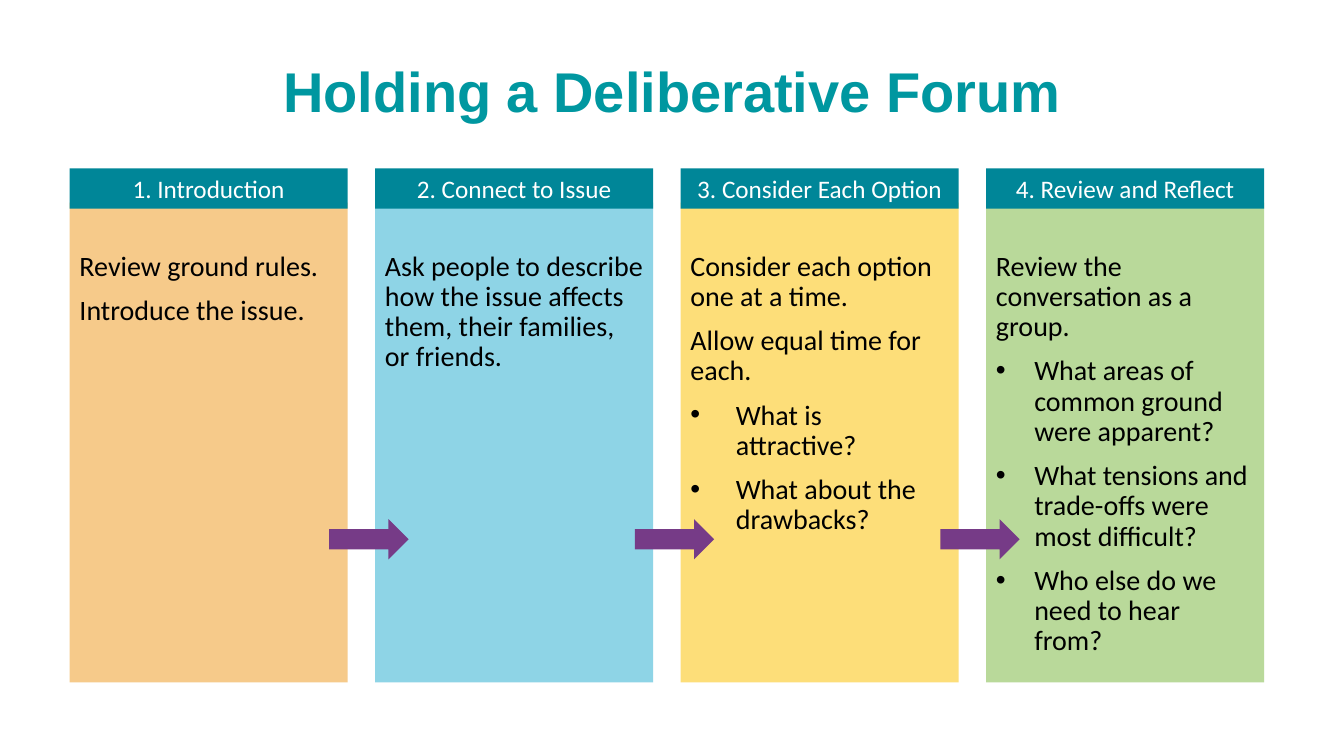
from dataclasses import dataclass

from lxml.etree import SubElement
from pptx import Presentation
from pptx.dml.color import RGBColor
from pptx.enum.shapes import MSO_SHAPE
from pptx.enum.text import MSO_ANCHOR, MSO_AUTO_SIZE, PP_ALIGN
from pptx.oxml.ns import qn
from pptx.util import Inches, Pt


@dataclass(frozen=True)
class Theme:
    """Colours, fonts and type sizes of the deck."""
    title_color: str = "0097A0"
    header_fill: str = "008698"
    header_color: str = "FFFFFF"
    body_color: str = "000000"
    arrow_fill: str = "763B87"
    title_font: str = "Arial"
    text_font: str = "Calibri"
    title_size: int = 40
    header_size: int = 18
    body_size: int = 20


@dataclass(frozen=True)
class Stage:
    """One stage of the forum."""
    heading: str
    fill: str
    opacity: int
    statements: tuple
    questions: tuple = ()
    indent: float = 0


STAGES = (
    Stage("1. Introduction", "F0A83C", 60,
          ("Review ground rules.", "Introduce the issue.")),
    Stage("2. Connect to Issue", "5FC2DC", 70,
          ("Ask people to describe how the issue affects them, their families, or friends.",)),
    Stage("3. Consider Each Option", "FDDB6B", 90,
          ("Consider each option one at a time.", "Allow equal time for each."),
          ("What is attractive?", "What about the drawbacks?"), 0.45),
    Stage("4. Review and Reflect", "95C665", 65,
          ("Review the conversation as a group.",),
          ("What areas of common ground were apparent?",
           "What tensions and trade-offs were most difficult?",
           "Who else do we need to hear from?"), 0.38),
)


def apply_format(target, values):
    """Set each attribute named in a dict of format values."""
    for name, value in values.items():
        setattr(target, name, value)


class ForumSlide:
    """Draws the elements of a slide in one style on one grid."""
    grid_left, grid_top = 0.69, 1.67
    column_pitch, row_pitch = 3.03, 0.4

    def __init__(self, presentation, theme):
        """Add a title-only slide."""
        self.theme = theme
        self.width, self.height = presentation.slide_width, presentation.slide_height
        self.slide = presentation.slides.add_slide(presentation.slide_layouts[5])

    def add_text(self, paragraph, text, font, color, layout):
        """Fill a paragraph with formatted text."""
        apply_format(paragraph, layout)
        run = paragraph.add_run()
        run.text = text
        apply_format(run.font, font)
        run.font.color.rgb = RGBColor.from_string(color)

    def title(self, text, left, top, width, height):
        """Place the title by shares of the slide's size."""
        title = self.slide.shapes.title
        apply_format(title, {
            "left": int(left * self.width), "top": int(top * self.height),
            "width": int(width * self.width), "height": int(height * self.height)})
        apply_format(title.text_frame, {
            "word_wrap": True, "auto_size": MSO_AUTO_SIZE.NONE,
            "vertical_anchor": MSO_ANCHOR.MIDDLE})
        self.add_text(title.text_frame.paragraphs[0], text,
                      {"name": self.theme.title_font, "size": Pt(self.theme.title_size),
                       "bold": True},
                      self.theme.title_color,
                      {"alignment": PP_ALIGN.CENTER, "line_spacing": 0.9})

    def block(self, kind, fill, column, row, columns, rows, opacity=100):
        """Add a filled shape on the grid."""
        shape = self.slide.shapes.add_shape(
            kind,
            Inches(self.grid_left + column * self.column_pitch),
            Inches(self.grid_top + row * self.row_pitch),
            Inches(columns * self.column_pitch), Inches(rows * self.row_pitch))
        shape.shadow.inherit = False
        shape.fill.solid()
        shape.fill.fore_color.rgb = RGBColor.from_string(fill)
        shape.line.fill.background()
        if opacity < 100:
            color = shape.element.spPr.find(qn("a:solidFill")).find(qn("a:srgbClr"))
            SubElement(color, qn("a:alpha"), val=str(opacity * 1000))
        return shape

    def header(self, text, column):
        """Add the heading bar of a column."""
        shape = self.block(MSO_SHAPE.RECTANGLE, self.theme.header_fill, column, 0, 0.91, 1)
        apply_format(shape.text_frame, {
            "word_wrap": True, "auto_size": MSO_AUTO_SIZE.SHAPE_TO_FIT_TEXT,
            "vertical_anchor": MSO_ANCHOR.TOP})
        self.add_text(shape.text_frame.paragraphs[0], text,
                      {"name": self.theme.text_font, "size": Pt(self.theme.header_size)},
                      self.theme.header_color, {"alignment": PP_ALIGN.CENTER})

    def bullet(self, paragraph, indent):
        """Give a paragraph a bullet with a hanging indent."""
        properties = paragraph._p.get_or_add_pPr()
        properties.set("marL", str(Inches(indent)))
        properties.set("indent", str(-Inches(indent)))
        SubElement(properties, qn("a:buFont"), typeface="Arial")
        SubElement(properties, qn("a:buChar"), char="•")

    def body(self, stage, column):
        """Add the panel of a column with its statements and questions."""
        shape = self.block(MSO_SHAPE.RECTANGLE, stage.fill, column, 0.85, 0.91, 11.9, stage.opacity)
        frame = shape.text_frame
        apply_format(frame, {"word_wrap": True, "vertical_anchor": MSO_ANCHOR.TOP,
                             "margin_top": Inches(0.49)})
        for index, text in enumerate(stage.statements + stage.questions):
            paragraph = frame.add_paragraph() if index else frame.paragraphs[0]
            self.add_text(paragraph, text,
                          {"name": self.theme.text_font, "size": Pt(self.theme.body_size)},
                          self.theme.body_color,
                          {"alignment": PP_ALIGN.LEFT, "line_spacing": 0.9,
                           "space_before": Pt(10 if index else 0)})
            if index >= len(stage.statements):
                self.bullet(paragraph, stage.indent)

    def arrow(self, column):
        """Add the arrow from a column to the next."""
        self.block(MSO_SHAPE.RIGHT_ARROW, self.theme.arrow_fill, column + 0.85, 8.7, 0.26, 1)


def main():
    """Build and save the presentation."""
    presentation = Presentation()
    apply_format(presentation, {"slide_width": Inches(13.33), "slide_height": Inches(7.5)})
    forum = ForumSlide(presentation, Theme())
    forum.title("Holding a Deliberative Forum", 0.07, 0.03, 0.86, 0.19)
    for column, stage in enumerate(STAGES):
        forum.body(stage, column)
        forum.header(stage.heading, column)
    for column in range(len(STAGES) - 1):
        forum.arrow(column)
    presentation.save("out.pptx")


if __name__ == "__main__":
    main()
